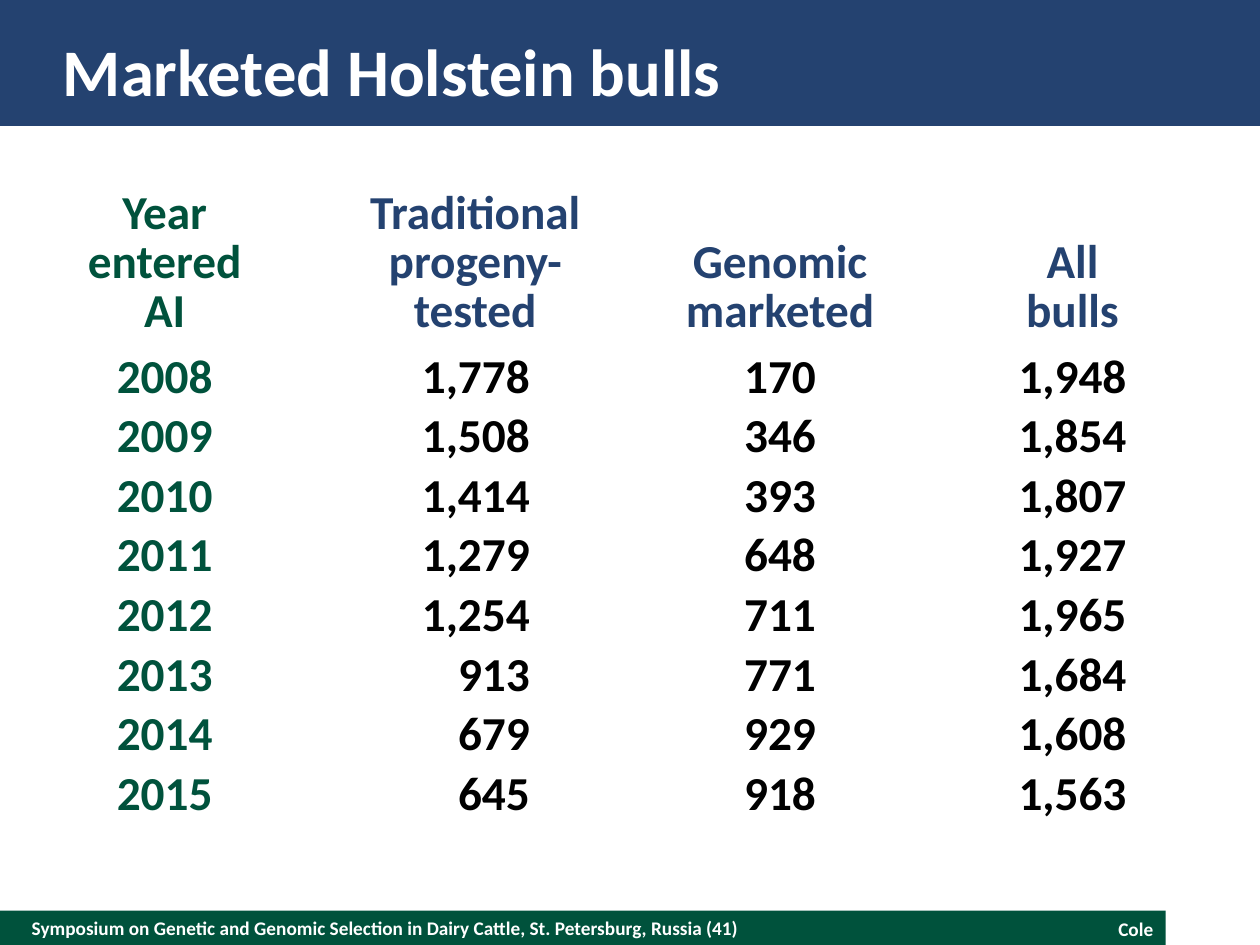
from pptx import Presentation
from pptx.dml.color import RGBColor
from pptx.enum import shapes, text
from pptx.util import Cm, Pt

FONT = "Calibri"
GREEN, BLUE, WHITE, BLACK = "00523C", "244270", "FFFFFF", "000000"
CENTER, RIGHT, LEFT = text.PP_ALIGN.CENTER, text.PP_ALIGN.RIGHT, text.PP_ALIGN.LEFT

BANDS = [
    (0, 18.36, 23.5, 0.69, GREEN),
    (0, 0, 25.4, 2.54, BLUE),
]
LABELS = [
    ("Symposium on Genetic and Genomic Selection in Dairy Cattle, St. Petersburg, Russia (41)",
     0.64, 18.36, 16.51, 0.69, 11, LEFT, 0),
    ("Cole", 18.42, 18.38, 5.08, 0.69, 11, RIGHT, 0.25),
    ("Marketed Holstein bulls", 1.27, 0.51, 22.86, 1.78, 38, LEFT, 0),
]
COLUMNS = [
    {"head": ["Year entered AI"], "width": 4.95, "inset": 0.64, "head_color": GREEN, "color": GREEN},
    {"head": ["Traditional progeny-", "tested"], "width": 6.93, "inset": 0, "number_inset": 2.24,
     "align": RIGHT},
    {"head": ["Genomic marketed"], "width": 7.14, "inset": 1.78},
    {"head": ["All bulls"], "width": 3.12, "inset": 0.25},
]
BULLS = [
    ("2008", "1,778", "170", "1,948"),
    ("2009", "1,508", "346", "1,854"),
    ("2010", "1,414", "393", "1,807"),
    ("2011", "1,279", "648", "1,927"),
    ("2012", "1,254", "711", "1,965"),
    ("2013", "913", "771", "1,684"),
    ("2014", "679", "929", "1,608"),
    ("2015", "645", "918", "1,563"),
]
TABLE_LEFT, TABLE_TOP = 1.04, 3.89
HEAD_HEIGHT, ROW_HEIGHT = 3.09, 1.2


def rgb(color):
    return RGBColor.from_string(color)


def write(frame, lines, size, color, align, spacing=None):
    frame.word_wrap = True
    for index, line in enumerate(lines):
        para = frame.paragraphs[0] if index == 0 else frame.add_paragraph()
        para.text = line
        para.alignment = align
        if spacing:
            para.line_spacing = Pt(spacing)
        font = para.font
        font.name, font.size, font.bold = FONT, Pt(size), True
        font.color.rgb = rgb(color)


def add_band(page, left, top, width, height, color):
    band = page.shapes.add_shape(shapes.MSO_SHAPE.RECTANGLE, Cm(left), Cm(top), Cm(width), Cm(height))
    band.shadow.inherit = False
    band.fill.solid()
    band.fill.fore_color.rgb = rgb(color)
    band.line.fill.background()


def add_label(page, label, left, top, width, height, size, align, inset):
    box = page.shapes.add_textbox(Cm(left), Cm(top), Cm(width), Cm(height))
    frame = box.text_frame
    frame.margin_left = frame.margin_right = Cm(inset)
    frame.margin_top = frame.margin_bottom = 0
    frame.vertical_anchor = text.MSO_ANCHOR.MIDDLE
    write(frame, [label], size, WHITE, align)


def fill_cell(cell, lines, inset, bottom, color, align, spacing):
    cell.fill.background()
    cell.margin_left, cell.margin_right = Cm(0.25), Cm(inset)
    cell.margin_top, cell.margin_bottom = 0, Cm(bottom)
    write(cell.text_frame, lines, 27, color, align, spacing)


def add_bull_table(page):
    width = sum(column["width"] for column in COLUMNS)
    height = HEAD_HEIGHT + ROW_HEIGHT * len(BULLS)
    table = page.shapes.add_table(len(BULLS) + 1, len(COLUMNS), Cm(TABLE_LEFT), Cm(TABLE_TOP),
                                  Cm(width), Cm(height)).table
    table.horz_banding = False
    for row in table.rows:
        row.height = Cm(ROW_HEIGHT)
    table.rows[0].height = Cm(HEAD_HEIGHT)
    for index, column in enumerate(COLUMNS):
        table.columns[index].width = Cm(column["width"])
        inset = column["inset"]
        head = table.cell(0, index)
        head.vertical_anchor = text.MSO_ANCHOR.BOTTOM
        fill_cell(head, column["head"], inset, 0.13, column.get("head_color", BLUE), CENTER, 28)
        for number, values in enumerate(BULLS, 1):
            fill_cell(table.cell(number, index), [values[index]], column.get("number_inset", inset), 0,
                      column.get("color", BLACK), column.get("align", CENTER), 34)


def main():
    deck = Presentation()
    deck.slide_width, deck.slide_height = Cm(25.4), Cm(19.05)
    page = deck.slides.add_slide(deck.slide_layouts[6])
    for band in BANDS:
        add_band(page, *band)
    for label in LABELS:
        add_label(page, *label)
    add_bull_table(page)
    deck.save("out.pptx")


if __name__ == "__main__":
    main()
